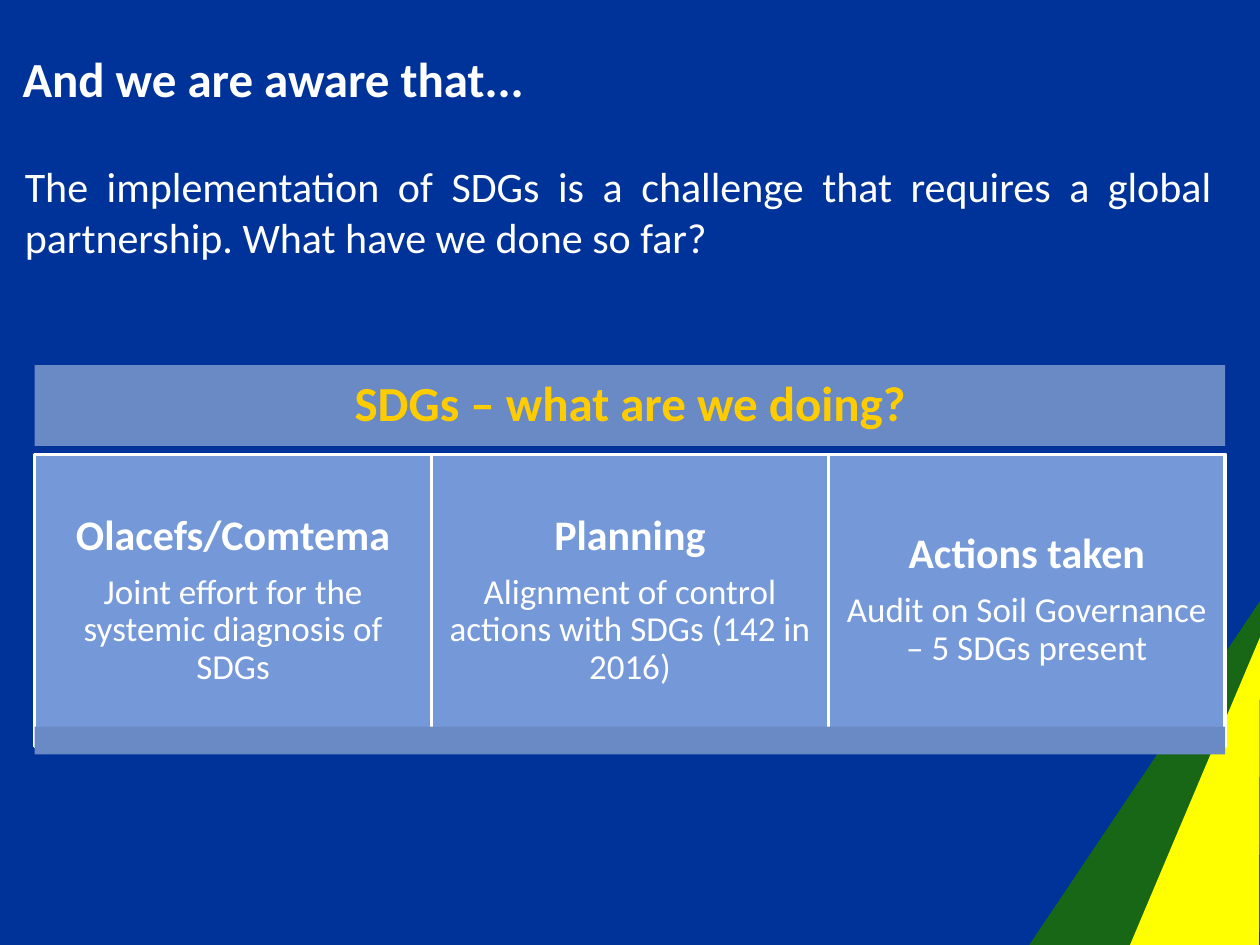
from dataclasses import dataclass

from pptx import Presentation
from pptx.dml.color import RGBColor
from pptx.enum.shapes import MSO_SHAPE
from pptx.enum.text import MSO_ANCHOR, MSO_AUTO_SIZE, PP_ALIGN
from pptx.util import Cm, Pt


@dataclass(frozen=True)
class Theme:
    font: str = "Calibri"
    background: str = "003399"
    text: str = "FFFFFF"
    accent: str = "FFCC00"
    band: str = "6A8AC5"
    card: str = "7598D9"
    green: str = "176717"
    yellow: str = "FFFF00"
    heading_size: int = 28
    body_size: int = 24
    detail_size: int = 20


THEME = Theme()
SLIDE_WIDTH, SLIDE_HEIGHT = 25.4, 19.05
CARDS = [
    ("Olacefs/Comtema", "Joint effort for the systemic diagnosis of SDGs"),
    ("Planning", "Alignment of control actions with SDGs (142 in 2016)"),
    ("Actions taken", "Audit on Soil Governance – 5 SDGs present"),
]


def paint(shape, color):
    shape.shadow.inherit = False
    shape.fill.solid()
    shape.fill.fore_color.rgb = RGBColor.from_string(color)
    shape.line.fill.background()


def write(paragraph, text, size, color=THEME.text, bold=False, align=PP_ALIGN.LEFT):
    paragraph.alignment = align
    run = paragraph.add_run()
    run.text = text
    run.font.name = THEME.font
    run.font.size = Pt(size)
    run.font.bold = bold
    run.font.color.rgb = RGBColor.from_string(color)


def write_centered(paragraph, text, size, **style):
    paragraph.line_spacing = 0.9
    paragraph.space_after = Pt(0.35 * size)
    write(paragraph, text, size, align=PP_ALIGN.CENTER, **style)


def add_panel(slide, left, top, width, height, color, inset=0.25):
    shape = slide.shapes.add_shape(
        MSO_SHAPE.RECTANGLE, Cm(left), Cm(top), Cm(width), Cm(height))
    paint(shape, color)
    frame = shape.text_frame
    frame.word_wrap = True
    frame.vertical_anchor = MSO_ANCHOR.MIDDLE
    frame.margin_left = frame.margin_right = Cm(inset)
    frame.margin_top = frame.margin_bottom = Cm(inset)
    return shape


def add_corner(slide, right, bottom):
    """Two wedges rising to the right edge of the slide."""
    for width, height, color in ((4.65, 6.93, THEME.green), (2.62, 6.2, THEME.yellow)):
        builder = slide.shapes.build_freeform(Cm(right - width), Cm(bottom))
        builder.add_line_segments(
            [(Cm(right), Cm(bottom - height)), (Cm(right - 0.02), Cm(bottom))])
        paint(builder.convert_to_shape(), color)


def add_title(slide, left, top, width, height):
    title = slide.shapes.title
    title.left, title.top, title.width, title.height = map(Cm, (left, top, width, height))
    frame = title.text_frame
    frame.auto_size = MSO_AUTO_SIZE.NONE
    frame.vertical_anchor = MSO_ANCHOR.MIDDLE
    write(frame.paragraphs[0], "And we are aware that...", THEME.heading_size, bold=True)


def add_introduction(slide, left, top, width, height):
    box = slide.shapes.add_textbox(Cm(left), Cm(top), Cm(width), Cm(height))
    box.text_frame.word_wrap = True
    write(box.text_frame.paragraphs[0],
          "The implementation of SDGs is a challenge that requires a global "
          "partnership. What have we done so far?",
          THEME.body_size, align=PP_ALIGN.JUSTIFY)


def add_activities(slide, left, top, width, height):
    """Heading band, a row of equal cards and a closing band."""
    header_height, card_top, card_height, footer_height = 1.63, 1.8, 5.89, 0.56

    header = add_panel(slide, left, top, width, header_height, THEME.band, inset=0.3)
    write_centered(header.text_frame.paragraphs[0], "SDGs – what are we doing?",
                   THEME.heading_size, color=THEME.accent, bold=True)

    card_width = width / len(CARDS)
    for index, (heading, detail) in enumerate(CARDS):
        card = add_panel(slide, left + index * card_width, top + card_top,
                         card_width, card_height, THEME.card)
        card.line.color.rgb = RGBColor.from_string(THEME.text)
        card.line.width = Pt(2)
        frame = card.text_frame
        write_centered(frame.paragraphs[0], heading, THEME.body_size, bold=True)
        write_centered(frame.add_paragraph(), detail, THEME.detail_size)

    add_panel(slide, left, top + height - footer_height, width, footer_height, THEME.band)


def main():
    presentation = Presentation()
    presentation.slide_width = Cm(SLIDE_WIDTH)
    presentation.slide_height = Cm(SLIDE_HEIGHT)
    slide = presentation.slides.add_slide(presentation.slide_layouts[5])
    slide.background.fill.solid()
    slide.background.fill.fore_color.rgb = RGBColor.from_string(THEME.background)

    add_corner(slide, SLIDE_WIDTH, SLIDE_HEIGHT)
    add_title(slide, 0.2, 0.81, 23.7, 1.52)
    add_introduction(slide, 0.25, 3.12, 24.43, 2.31)
    add_activities(slide, 0.7, 7.36, 24, 7.85)
    presentation.save("out.pptx")


if __name__ == "__main__":
    main()
